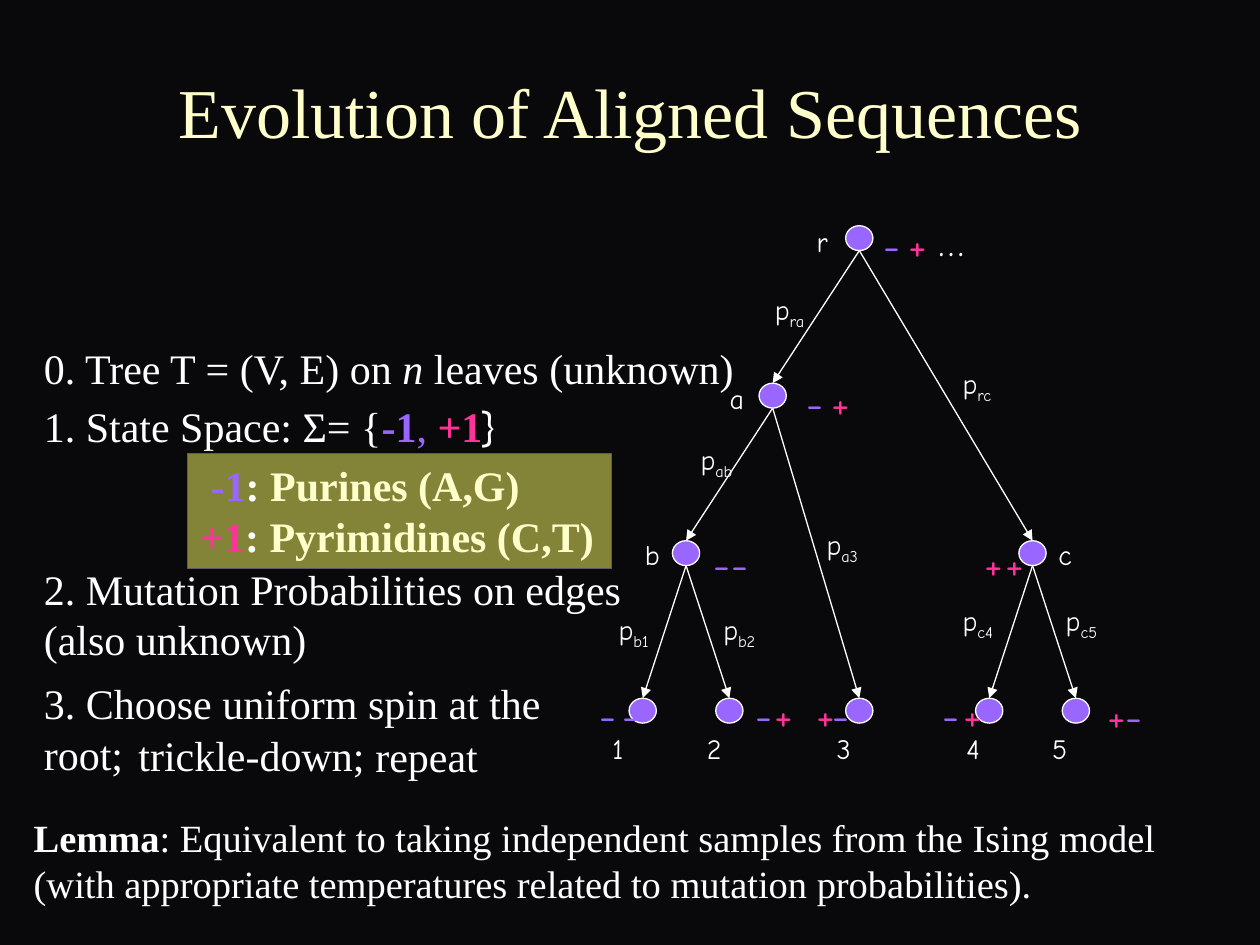
"""Build a slide on the evolution of aligned sequences along a tree."""
import pptx
import pptx.dml.color
import pptx.enum.shapes
import pptx.enum.text
import pptx.oxml
import pptx.oxml.ns
import pptx.util

Pt = pptx.util.Pt
SHAPE = pptx.enum.shapes.MSO_SHAPE
WHITE, CREAM, VIOLET, PINK = "FFFFFF", "FFFFCC", "9966FF", "FF3399"
SERIF, COMIC = "Times New Roman", "Comic Neue"

ROOT = (367.3, 129)
STEP, DROP = 24.75, 90
OVAL = (15.6, 14.2)
NODES = {
    "r": (5, 0), "a": (3, 1), "b": (1, 2), "c": (9, 2),
    "1": (0, 3), "2": (2, 3), "3": (5, 3), "4": (8, 3), "5": (10, 3),
}
EDGES = {
    "ra": (442.8, 163.4), "rc": (550, 206), "ab": (400.3, 249),
    "a3": (472.3, 298), "b1": (353.5, 346.3), "b2": (413.3, 346.3),
    "c4": (550, 341.3), "c5": (609, 341.3),
}
NAMES = {
    "r": (466.6, 125.3, 8), "a": (416.9, 214.6, 8), "b": (368.6, 303.8, 9.4),
    "c": (604.8, 303.8, 8), "1": (349.9, 414.7, 7.2), "2": (403.9, 414.7, 10),
    "3": (478.1, 414.7, 10), "4": (552.2, 414.7, 10), "5": (601.2, 414.7, 10),
}
SPINS = [
    (120.2, "-+", (504.7, 519.1)), (210.2, "-+", (460.8, 475.2)),
    (302.4, "--", (407.5, 418.3)), (302.4, "++", (562.3, 574.6)),
    (388.4, "--", (342.7, 355.7)), (388.4, "-+", (432, 442.8)),
    (388.4, "+-", (466.6, 475.9)), (388.4, "-+", (538.6, 550.8)),
    (389.2, "+-", (632.9, 643)),
]
SIGNS = {"-": (VIOLET, 7.2), "+": (PINK, 8.6)}

BOLD = {"bold": True}
BODY = [
    ((18, 192.2, 450, 36), 24, True, [
        ("0. Tree T = (V, E) on ", {}), ("n ", {"italic": True}),
        ("leaves (unknown)", {})]),
    ((18, 225.4, 324, 36), 24, True, [
        ("1. State Space: Σ= {", {}), ("-1", {"color": VIOLET, **BOLD}),
        (", ", {"color": VIOLET}), ("+1", {"color": PINK, **BOLD}),
        ("}", {"name": "Cabin"})]),
    ((18, 318.2, 360, 65.5), 24, True, [
        ("2. Mutation Probabilities on edges (also unknown)", {})]),
    ((18, 383.8, 330, 65.5), 24, True, [
        ("3. Choose uniform spin at the root;", {})]),
    ((72, 413.3, 145.4, 36), 24, False, [("trickle-down;", {})]),
    ((207.4, 414, 74.2, 36), 24, False, [("repeat", {})]),
    ((12.2, 461.5, 660, 60.5), 22, True, [
        ("Lemma", BOLD),
        (": Equivalent to taking independent samples from the Ising model "
         "(with appropriate temperatures related to mutation probabilities).", {})]),
]
KEY = [
    [(" -1", {"color": VIOLET}), (": ", {}), ("Purines (A,G)", {"color": CREAM})],
    [("+1", {"color": PINK}), (": ", {}), ("Pyrimidines (C,T)", {"color": CREAM})],
]


def rgb(code):
    return pptx.dml.color.RGBColor.from_string(code)


def put(frame, lines, base, wrap=True, **rules):
    frame.word_wrap = wrap
    frame.auto_size = pptx.enum.text.MSO_AUTO_SIZE.SHAPE_TO_FIT_TEXT
    for i, line in enumerate(lines):
        para = frame.add_paragraph() if i else frame.paragraphs[0]
        for key, value in rules.items():
            setattr(para, key, value)
        for words, extra in line:
            run = para.add_run()
            run.text = words
            style = {"name": SERIF, "color": WHITE, **base, **extra}
            run.font.color.rgb = rgb(style.pop("color"))
            if "base" in style:
                run._r.get_or_add_rPr().set("baseline", style.pop("base"))
            for key, value in style.items():
                setattr(run.font, key, value)


def box(slide, spot, lines, base, wrap=True, **rules):
    frame = slide.shapes.add_textbox(*map(Pt, spot)).text_frame
    put(frame, lines, base, wrap, **rules)
    return frame


def label(slide, spot, runs, base):
    frame = box(slide, spot, [runs], {"name": COMIC, **base}, False, line_spacing=1.17)
    for side in ("left", "top", "right", "bottom"):
        setattr(frame, "margin_" + side, 0)


def paint(shape, fill, line):
    shape.shadow.inherit = False
    shape.fill.solid()
    shape.fill.fore_color.rgb = rgb(fill)
    shape.line.color.rgb = rgb(line)
    shape.line.width = Pt(0.75)


def tree(slide):
    wide, high = OVAL
    ovals = {}
    for name, (col, row) in NODES.items():
        spot = (ROOT[0] + col * STEP - wide / 2, ROOT[1] + row * DROP)
        ovals[name] = slide.shapes.add_shape(SHAPE.OVAL, *map(Pt, spot + OVAL))
        paint(ovals[name], VIOLET, WHITE)
    for (start, end), spot in EDGES.items():
        top, low = ovals[start], ovals[end]
        arrow = slide.shapes.add_connector(
            pptx.enum.shapes.MSO_CONNECTOR.STRAIGHT,
            top.left + top.width // 2, top.top + top.height,
            low.left + low.width // 2, low.top)
        arrow.end_connect(low, 0)
        arrow.line.color.rgb = rgb(WHITE)
        arrow.line.width = Pt(0.75)
        props = arrow._element.spPr
        tail = pptx.oxml.ns.qn("a:tailEnd")
        props.find(pptx.oxml.ns.qn("a:ln")).makeelement(tail)
        tip = pptx.oxml.parse_xml(
            f'<a:tailEnd {pptx.oxml.ns.nsdecls("a")} type="triangle"/>')
        props.find(pptx.oxml.ns.qn("a:ln")).append(tip)
        props.append(pptx.oxml.parse_xml(
            f'<a:effectLst {pptx.oxml.ns.nsdecls("a")}/>'))
        label(slide, (*spot, 20.5, 22.3),
              [("p", {}), (start + end, {"base": "-25000"})], {"size": Pt(16)})
    for name, (x, y, span) in NAMES.items():
        label(slide, (x, y, span, 22.3), [(name, {})], {"size": Pt(16)})
    for y, pair, places in SPINS:
        for sign, x in zip(pair, places):
            color, span = SIGNS[sign]
            label(slide, (x, y, span, 25.2), [(sign, {})],
                  {"size": Pt(24), "color": color})
    box(slide, (529.2, 121, 172.8, 33.8), [[("…", {})]],
        {"name": COMIC, "size": Pt(22)})


def main():
    deck = pptx.Presentation()
    deck.slide_width, deck.slide_height = Pt(720), Pt(540)
    slide = deck.slides.add_slide(deck.slide_layouts[6])
    slide.background.fill.solid()
    slide.background.fill.fore_color.rgb = rgb("09090B")

    title = box(slide, (24, 18, 672, 90), [[("Evolution of Aligned Sequences", {})]],
                {"size": Pt(40), "color": CREAM},
                alignment=pptx.enum.text.PP_ALIGN.CENTER)
    title.auto_size = pptx.enum.text.MSO_AUTO_SIZE.NONE
    title.vertical_anchor = pptx.enum.text.MSO_ANCHOR.MIDDLE

    tree(slide)
    for spot, size, wrap, runs in BODY:
        box(slide, spot, [runs], {"size": Pt(size)}, wrap)

    key = slide.shapes.add_shape(SHAPE.RECTANGLE, *map(Pt, (107.3, 259.2, 242, 65.5)))
    paint(key, "FFFF66", "5A5C6C")
    tint = key._element.spPr.find(".//" + pptx.oxml.ns.qn("a:srgbClr"))
    tint.append(pptx.oxml.parse_xml(
        f'<a:alpha {pptx.oxml.ns.nsdecls("a")} val="50000"/>'))
    put(key.text_frame, KEY, {"size": Pt(24), **BOLD}, False,
        alignment=pptx.enum.text.PP_ALIGN.LEFT)
    key.text_frame.vertical_anchor = pptx.enum.text.MSO_ANCHOR.TOP
    deck.save("out.pptx")


if __name__ == "__main__":
    main()
